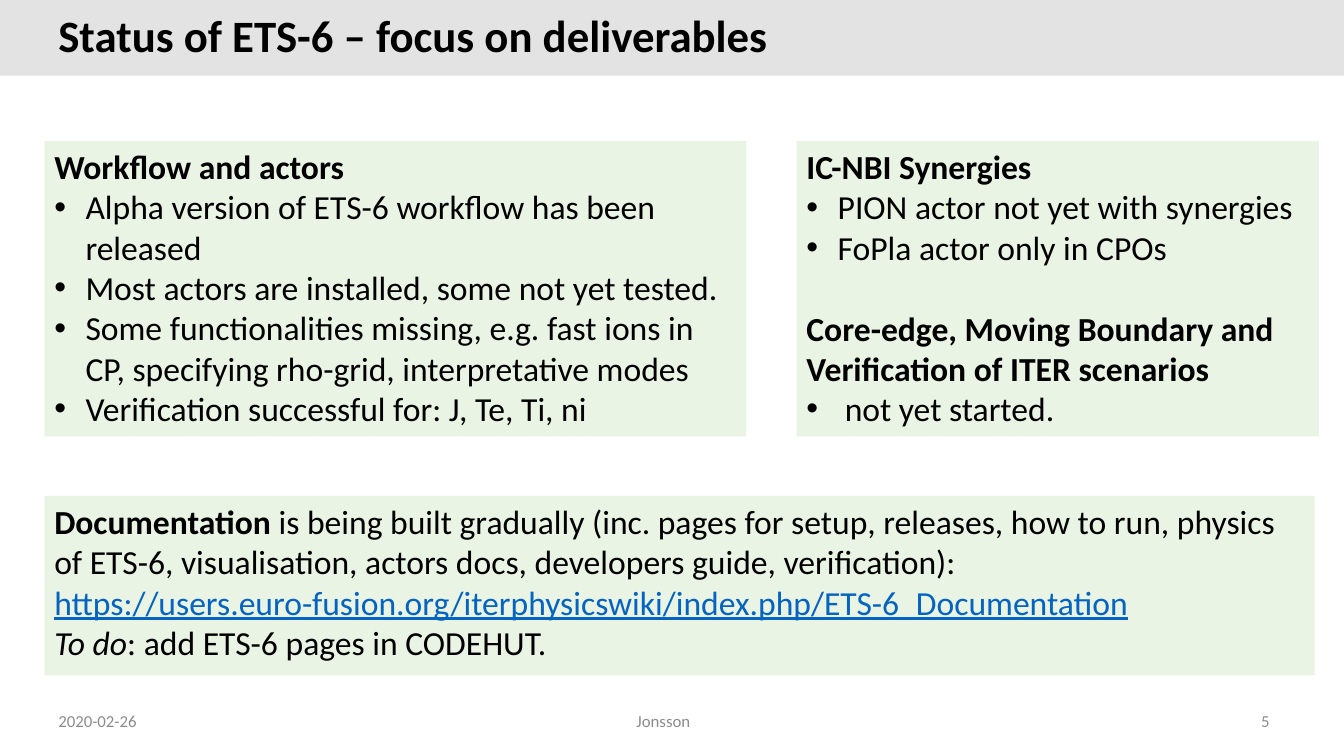
from dataclasses import dataclass

from lxml import etree
from pptx import Presentation
from pptx import util as u
from pptx.dml.color import RGBColor
from pptx.enum import shapes, text
from pptx.oxml.ns import qn

BLACK, GREY, BLUE = "000000", "8C8C8C", "0563C1"
LEFT, MID, RIGHT = text.PP_ALIGN.LEFT, text.PP_ALIGN.CENTER, text.PP_ALIGN.RIGHT


@dataclass
class Run:
    text: str
    bold: bool = False
    slant: bool = False
    under: bool = False
    color: str = BLACK


@dataclass
class Para:
    runs: list[Run]
    indent: float = 0  # hanging bullet indent, none if zero
    before: float = 0


@dataclass
class Panel:
    left: float
    top: float
    width: float
    height: float
    paras: list[Para]


@dataclass
class Foot:
    text: str
    left: float
    width: float
    align: text.PP_ALIGN


def paint(target, color: str) -> None:
    target.rgb = RGBColor.from_string(color)


def head(words: str, before: float = 0) -> Para:
    return Para([Run(words, bold=True)], before=before)


def point(words: str, indent: float = 0.31) -> Para:
    return Para([Run(words)], indent)


def write(frame, paras: list[Para], *, size: float = 24, align=LEFT,
          anchor=text.MSO_ANCHOR.TOP, spacing: float = 1.0) -> None:
    frame.word_wrap = True
    frame.vertical_anchor = anchor
    for i, item in enumerate(paras):
        para = frame.paragraphs[0] if i == 0 else frame.add_paragraph()
        if item.indent:
            props = para._p.get_or_add_pPr()
            props.set("marL", str(u.Inches(item.indent)))
            props.set("indent", str(-u.Inches(item.indent)))
            etree.SubElement(props, qn("a:buFont")).set("typeface", "Arial")
            etree.SubElement(props, qn("a:buChar")).set("char", "•")
        para.alignment = align
        para.line_spacing = spacing
        if item.before:
            para.space_before = u.Pt(item.before)
        for part in item.runs:
            for n, line in enumerate(part.text.split("\n")):
                if n:
                    para.add_line_break()
                if not line:
                    continue
                run = para.add_run()
                run.text = line
                font = run.font
                font.name, font.size = "Calibri", u.Pt(size)
                font.bold, font.italic, font.underline = part.bold, part.slant, part.under
                paint(font.color, part.color)


def block(slide, left: float, top: float, width: float, height: float,
          color: str, alpha: int = 100):
    shape = slide.shapes.add_shape(
        shapes.MSO_SHAPE.RECTANGLE, *map(u.Inches, (left, top, width, height)))
    shape.shadow.inherit = False
    shape.line.fill.background()
    shape.fill.solid()
    paint(shape.fill.fore_color, color)
    if alpha < 100:
        tint = shape._element.spPr.find(qn("a:solidFill"))[0]
        etree.SubElement(tint, qn("a:alpha")).set("val", str(alpha * 1000))
    return shape


def label(slide, left: float, top: float, width: float, height: float,
          run: Run, **form) -> None:
    box = slide.shapes.add_textbox(*map(u.Inches, (left, top, width, height)))
    write(box.text_frame, [Para([run])], anchor=text.MSO_ANCHOR.MIDDLE, **form)


PANELS = [
    Panel(0.44, 1.4, 6.96, 2.93, [
        head("Workflow and actors"),
        point("Alpha version of ETS-6 workflow has been released"),
        point("Most actors are installed, some not yet tested."),
        point("Some functionalities missing, e.g. fast ions in CP, "
              "specifying rho-grid, interpretative modes"),
        point("Verification successful for: J, Te, Ti, ni"),
    ]),
    Panel(7.9, 1.4, 5.18, 2.93, [
        head("IC-NBI Synergies"),
        point("PION actor not yet with synergies"),
        point("FoPla actor only in CPOs"),
        head("Core-edge, Moving Boundary and Verification of ITER scenarios", 29),
        point("not yet started.", 0.38),
    ]),
    Panel(0.44, 4.92, 12.6, 1.78, [
        Para([
            Run("Documentation", bold=True),
            Run(" is being built gradually (inc. pages for setup, releases, how to run, "
                "physics of ETS-6, visualisation, actors docs, developers guide, "
                "verification):\n"),
            Run("https://users.euro-fusion.org/iterphysicswiki/index.php/ETS-6_Documentation",
                under=True, color=BLUE),
        ]),
        Para([Run("To do", slant=True), Run(": add ETS-6 pages in CODEHUT.")]),
    ]),
]

FEET = [
    Foot("2020-02-26", 0.48, 3, LEFT),
    Foot("Jonsson", 4.33, 4.5, MID),
    Foot("5", 9.69, 3, RIGHT),
]


def main() -> None:
    deck = Presentation()
    deck.slide_width, deck.slide_height = u.Inches(13.33), u.Inches(7.5)
    slide = deck.slides.add_slide(deck.slide_layouts[6])

    # Title band
    block(slide, 0, 0, 13.33, 0.75, "E3E3E3")
    label(slide, 0.48, 0.13, 11.54, 0.49,
          Run("Status of ETS-6 – focus on deliverables", bold=True),
          size=32, spacing=0.9)

    # Status panels
    for panel in PANELS:
        shape = block(slide, panel.left, panel.top, panel.width, panel.height,
                      "E2F0D9", alpha=70)
        write(shape.text_frame, panel.paras)

    # Footer
    for foot in FEET:
        label(slide, foot.left, 6.95, foot.width, 0.4,
              Run(foot.text, color=GREY), size=12, align=foot.align)

    deck.save("out.pptx")


if __name__ == "__main__":
    main()
